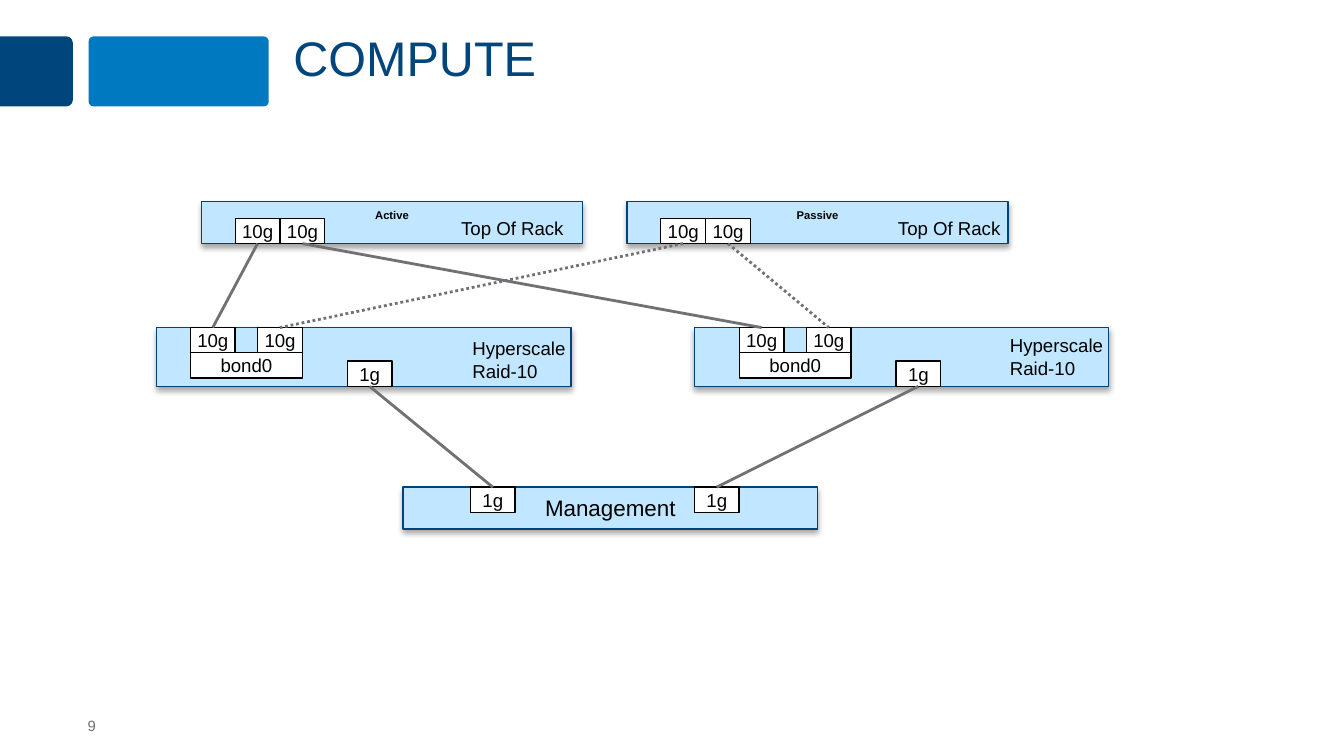
"""Build the COMPUTE slide: rack switches, bonded servers and the management network."""
from dataclasses import dataclass

from lxml.etree import SubElement
from pptx import Presentation
from pptx.dml.color import RGBColor
from pptx.enum.dml import MSO_LINE
from pptx.enum.shapes import MSO_CONNECTOR, MSO_SHAPE
from pptx.enum.text import MSO_ANCHOR, PP_ALIGN
from pptx.oxml import parse_xml
from pptx.oxml.ns import nsdecls, qn
from pptx.util import Pt


@dataclass(frozen=True)
class Theme:
    font: str = "Arial"
    navy: RGBColor = RGBColor(0x00, 0x45, 0x7C)
    blue: RGBColor = RGBColor(0x00, 0x79, 0xC1)
    device_fill: RGBColor = RGBColor(0xC0, 0xE7, 0xFF)
    device_line: RGBColor = RGBColor(0x00, 0x43, 0x79)
    gray: RGBColor = RGBColor(0x71, 0x70, 0x74)
    white: RGBColor = RGBColor(0xFF, 0xFF, 0xFF)
    black: RGBColor = RGBColor(0x00, 0x00, 0x00)
    title_size: int = 26
    management_size: int = 12
    label_size: int = 10
    number_size: int = 8
    role_size: int = 6


theme = Theme()
presentation = Presentation()
presentation.slide_width, presentation.slide_height = Pt(720), Pt(405)
slide = presentation.slides.add_slide(presentation.slide_layouts[5])
shapes = slide.shapes


def write(shape, text, size, color=theme.black, alignment=PP_ALIGN.LEFT,
          anchor=MSO_ANCHOR.TOP, inset=None, bold=False, wrap=True):
    frame = shape.text_frame
    frame.text = text
    frame.word_wrap = wrap
    frame.vertical_anchor = anchor
    if inset is not None:
        frame.margin_left = frame.margin_right = Pt(inset)
        frame.margin_top = frame.margin_bottom = Pt(inset)
    for paragraph in frame.paragraphs:
        paragraph.alignment = alignment
        paragraph.font.name = theme.font
        paragraph.font.size = Pt(size)
        paragraph.font.bold = bold
        paragraph.font.color.rgb = color


def add_box(left, top, width, height, text="", size=theme.label_size, device=False):
    box = shapes.add_shape(MSO_SHAPE.RECTANGLE, Pt(left), Pt(top), Pt(width), Pt(height))
    box.shadow.inherit = False
    box.fill.solid()
    box.fill.fore_color.rgb = theme.device_fill if device else theme.white
    box.line.color.rgb = theme.device_line if device else theme.black
    box.line.width = Pt(0.75)
    if device:
        effects = box.element.spPr.find(qn("a:effectLst"))
        effects.append(parse_xml(
            f'<a:outerShdw {nsdecls("a")} blurRad="{Pt(3.1)}" dist="{Pt(1.8)}" dir="5400000" '
            'rotWithShape="0"><a:srgbClr val="000000"><a:alpha val="35000"/></a:srgbClr></a:outerShdw>'))
    write(box, text, size, alignment=PP_ALIGN.CENTER,
          anchor=MSO_ANCHOR.TOP if device else MSO_ANCHOR.MIDDLE,
          inset=None if device else 3.6, bold=size == theme.role_size, wrap=False)
    return box


for kind, left, top, width, height, rotation, corner, color in (
    (MSO_SHAPE.ROUND_2_SAME_RECTANGLE, 0.75, 18.75, 37.5, 39, 90, 0.09, theme.navy),
    (MSO_SHAPE.ROUNDED_RECTANGLE, 47.5, 19.5, 96.5, 37.5, 0, 0.07, theme.blue),
):
    banner = shapes.add_shape(kind, Pt(left), Pt(top), Pt(width), Pt(height))
    banner.shadow.inherit = False
    banner.rotation = rotation
    banner.adjustments[0] = corner
    banner.fill.solid()
    banner.fill.fore_color.rgb = color
    banner.line.fill.background()

title = shapes.title
title.left, title.top, title.width, title.height = Pt(150), Pt(13.5), Pt(552), Pt(49)
write(title, "COMPUTE", theme.title_size, theme.navy)
title.text_frame.paragraphs[0].line_spacing = 0.95

slide_number = shapes.add_textbox(Pt(47), Pt(384), Pt(45), Pt(9))
write(slide_number, "9", theme.number_size, theme.gray, anchor=MSO_ANCHOR.MIDDLE, inset=0)

port_size = 24, 13.5

switch_ports = []
for left, role, label_left in ((108, "Active", 240), (336, "Passive", 474)):
    add_box(left, 108, 204, 22.5, role, theme.role_size, device=True)
    switch_ports.append([add_box(left + offset, 117, *port_size, "10g") for offset in (18, 42)])
    label = shapes.add_textbox(Pt(label_left), Pt(112.5), Pt(72), Pt(19.5))
    write(label, "Top Of Rack", theme.label_size)

server_ports, server_management_ports = [], []
for left, bond_left, label_top in ((84, 102, 177), (372, 396, 175.5)):
    add_box(left, 175.5, 222, 31.5, device=True)
    server_ports.append([add_box(bond_left + offset, 175.5, *port_size, "10g") for offset in (0, 36)])
    add_box(bond_left, 189, 60, 13.5, "bond0")
    server_management_ports.append(add_box(bond_left + 84, 193.5, *port_size, "1g"))
    label = shapes.add_textbox(Pt(left + 162), Pt(label_top), Pt(66), Pt(31.5))
    write(label, "Hyperscale\nRaid-10", theme.label_size)

add_box(216, 261, 222, 22.5, "Management", theme.management_size, device=True)
management_ports = [add_box(left, 261, *port_size, "1g") for left in (252, 372)]

links = [
    (switch_ports[switch][server], server_ports[server][switch], switch == 1)
    for switch in range(2) for server in range(2)
]
links += [(upper, lower, False) for upper, lower in zip(server_management_ports, management_ports)]
bottom_site, top_site = 2, 0
for upper, lower, dotted in links:
    link = shapes.add_connector(MSO_CONNECTOR.STRAIGHT, 0, 0, 0, 0)
    link.begin_connect(upper, bottom_site)
    link.end_connect(lower, top_site)
    link.line.color.rgb = theme.gray
    link.line.width = Pt(1.5)
    if dotted:
        link.line.dash_style = MSO_LINE.ROUND_DOT
    SubElement(link.element.spPr, qn("a:effectLst"))

presentation.save("out.pptx")
